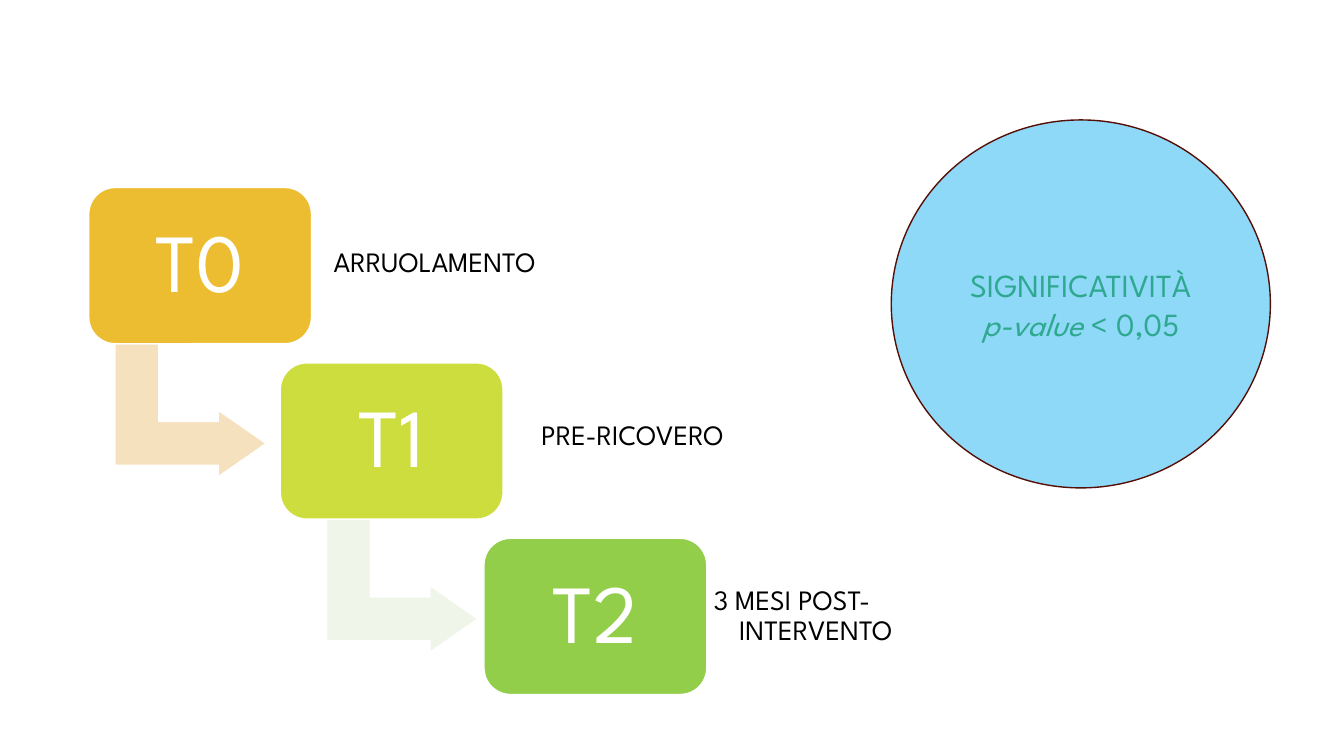
from collections import namedtuple

from pptx import Presentation
from pptx.dml.color import RGBColor
from pptx.enum.shapes import MSO_SHAPE as Preset
from pptx.enum.text import MSO_ANCHOR as Anchor, PP_ALIGN as Align
from pptx.util import Inches, Pt

FONT = "League Spartan"
CELL = Inches(0.1)
STEP_WIDTH, STEP_HEIGHT, STEP_PITCH = 22.1, 15.5, 17.4
ARROW_WIDTH, ARROW_HEIGHT = 15, 13.2
LABEL_HEIGHT = 12.5

Box = namedtuple("Box", "left top width height")
Step = namedtuple("Step", "name color left label label_gap label_drop label_width")
Arrow = namedtuple("Arrow", "color indent")

STEPS = [
    Step("T0", "ECBD31", 8.8, "ARRUOLAMENTO", 1.4, 1.3, 27.2),
    Step("T1", "CDDD3D", 27.8, "PRE-RICOVERO", 3, 1, 31.8),
    Step("T2", "92CE4A", 48, "3 MESI POST-INTERVENTO", -0.1, 1.5, 22),
]
ARROWS = [Arrow("F6E1BE", 2.6), Arrow("EFF6E9", 4.6)]


def color(value):
    return RGBColor.from_string(value)


def place(box):
    return [round(length * CELL) for length in box]


def add_preset(slide, preset, box, fill, line):
    shape = slide.shapes.add_shape(preset, *place(box))
    shape.shadow.inherit = False
    shape.fill.solid()
    shape.fill.fore_color.rgb = color(fill)
    shape.line.color.rgb = color(line)
    shape.line.width = Pt(1)
    return shape


def set_insets(frame, inset):
    frame.margin_left = frame.margin_right = Inches(inset)
    frame.margin_top = frame.margin_bottom = Inches(inset)


def format_text(frame, size, text_color, alignment, spacing=1):
    frame.word_wrap = True
    frame.vertical_anchor = Anchor.MIDDLE
    for paragraph in frame.paragraphs:
        paragraph.alignment = alignment
        paragraph.line_spacing = spacing
        for run in paragraph.runs:
            run.font.name = FONT
            run.font.size = Pt(size)
            run.font.color.rgb = color(text_color)


def add_arrow(slide, box, arrow):
    left = box.left + arrow.indent + (ARROW_WIDTH - ARROW_HEIGHT) / 2
    top = box.top + box.height - (ARROW_WIDTH - ARROW_HEIGHT) / 2
    frame = Box(left, top, ARROW_HEIGHT, ARROW_WIDTH)
    shape = add_preset(slide, Preset.BENT_UP_ARROW, frame, arrow.color, "FFFFFF")
    shape.rotation = 90
    for index, value in enumerate((0.33, 0.25, 0.36)):
        shape.adjustments[index] = value


def add_step(slide, box, step):
    shape = add_preset(slide, Preset.ROUNDED_RECTANGLE, box, step.color, "FFFFFF")
    shape.adjustments[0] = 0.17
    shape.text_frame.text = step.name
    set_insets(shape.text_frame, 0.25)
    format_text(shape.text_frame, 59, "FFFFFF", Align.CENTER, 0.9)

    label_box = Box(box.left + box.width + step.label_gap,
                    box.top + step.label_drop, step.label_width, LABEL_HEIGHT)
    label = slide.shapes.add_textbox(*place(label_box))
    label.text_frame.text = step.label
    set_insets(label.text_frame, 0.08)
    properties = label.text_frame.paragraphs[0]._p.get_or_add_pPr()
    properties.set("marL", str(Inches(0.25)))
    properties.set("indent", str(-Inches(0.25)))
    format_text(label.text_frame, 20, "000000", Align.LEFT, 0.9)


def add_timeline(slide, left, top):
    boxes = [Box(left + step.left - STEPS[0].left, top + row * STEP_PITCH,
                 STEP_WIDTH, STEP_HEIGHT) for row, step in enumerate(STEPS)]
    for box, arrow in zip(boxes, ARROWS):
        add_arrow(slide, box, arrow)
    for box, step in zip(boxes, STEPS):
        add_step(slide, box, step)


def add_significance(slide, box):
    circle = add_preset(slide, Preset.OVAL, box, "8ED8F8", "560F06")
    frame = circle.text_frame
    frame.text = "SIGNIFICATIVITÀ"
    threshold = frame.add_paragraph()
    symbol = threshold.add_run()
    symbol.text = "p-value"
    symbol.font.italic = True
    threshold.add_run().text = " < 0,05"
    format_text(frame, 23, "2EA98F", Align.CENTER)


def main():
    presentation = Presentation()
    presentation.slide_width = Inches(13.33)
    presentation.slide_height = Inches(7.5)
    slide = presentation.slides.add_slide(presentation.slide_layouts[6])
    add_timeline(slide, 8.8, 18.6)
    add_significance(slide, Box(88.4, 11.9, 37.6, 36.5))
    presentation.save("out.pptx")


if __name__ == "__main__":
    main()
